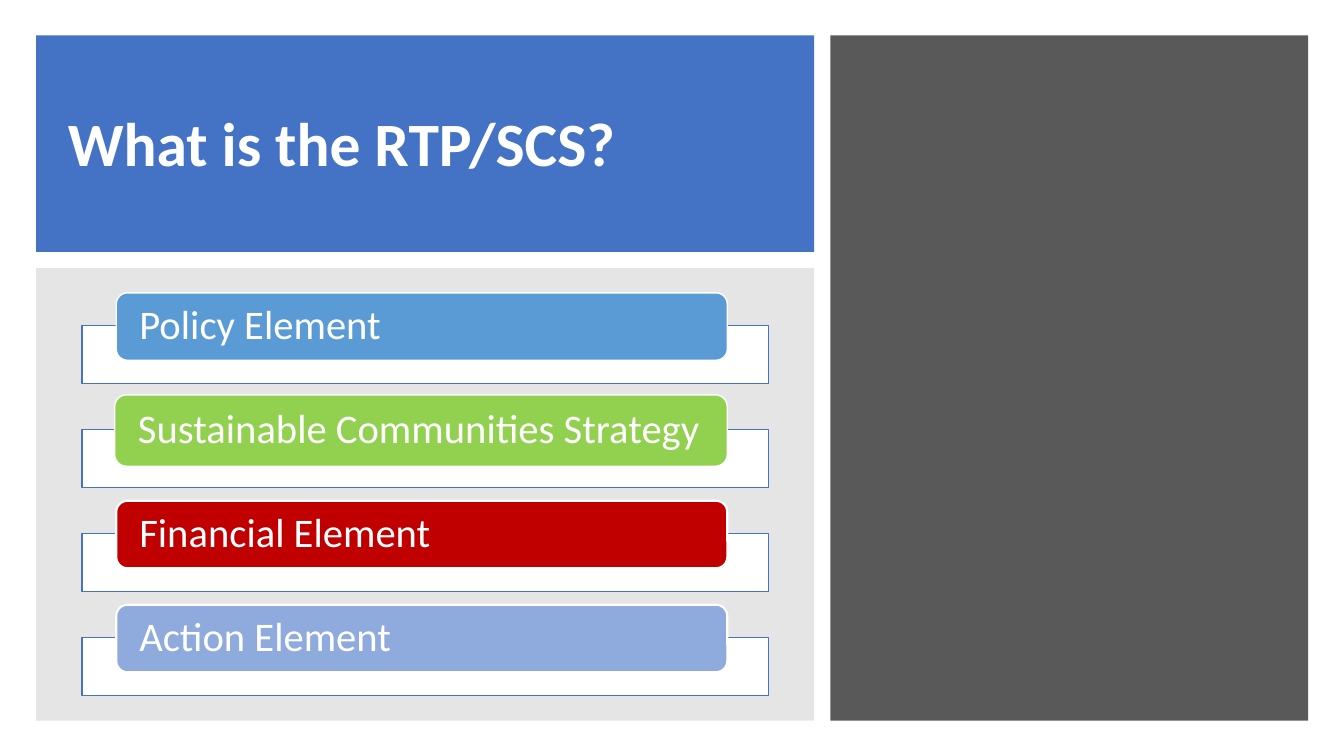
import pptx
import pptx.util
import pptx.dml.color
import pptx.enum.shapes
import pptx.enum.text
import pptx.oxml.ns
from dataclasses import dataclass
from lxml import etree
from pptx.util import Cm, Pt

TITLE = "What is the RTP/SCS?"
# label, fill, outline in points, tab width and height in cm
ELEMENTS = [
    ("Policy Element", "5B9BD5", 1, 15.4, 1.7),
    ("Sustainable Communities Strategy", "92D050", 1, 15.44, 1.8),
    ("Financial Element", "C00000", 1.5, 15.4, 1.7),
    ("Action Element", "8FAADC", 1.5, 15.4, 1.7),
]


@dataclass(frozen=True)
class Theme:
    font: str = "Calibri"
    title_size: float = 44
    label_size: float = 29
    blue: str = "4472C4"
    grey: str = "7F7F7F"
    dark: str = "595959"
    white: str = "FFFFFF"


THEME = Theme()

# Lengths in cm
MARGIN_LEFT, MARGIN_TOP = 0.91, 0.89
MAIN_WIDTH, SIDE_WIDTH = 19.61, 12.04
HEADER_HEIGHT, BODY_HEIGHT = 5.46, 11.4
GUTTER = 0.41
TITLE_INDENT = 0.55
BAR_LEFT, BAR_TOP, BAR_WIDTH, BAR_HEIGHT = 2.07, 8.21, 17.3, 1.45
BAR_STEP = 2.62
TAB_RIGHT, TAB_DROP = 18.33, 0.02
# The rounded corners add a little to the left and right insets
TAB_INSET_X, TAB_INSET_Y = 0.5, 0.08


def rgb(color):
    return pptx.dml.color.RGBColor.from_string(color)


def add_box(slide, kind, left, top, width, height, fill, opacity=100,
            line=None, line_width=1):
    """Add a flat preset shape; lengths in cm, opacity in percent."""
    shape = slide.shapes.add_shape(kind, Cm(left), Cm(top), Cm(width), Cm(height))
    shape.shadow.inherit = False
    shape.fill.solid()
    shape.fill.fore_color.rgb = rgb(fill)
    if opacity < 100:
        qn = pptx.oxml.ns.qn
        color = shape.fill._xPr.find(qn("a:solidFill")).find(qn("a:srgbClr"))
        etree.SubElement(color, qn("a:alpha"), val=str(opacity * 1000))
    if line:
        shape.line.color.rgb = rgb(line)
        shape.line.width = Pt(line_width)
    else:
        shape.line.fill.background()
    return shape


def write_text(shape, text, size, color=THEME.white, bold=False,
               inset_x=0.25, inset_y=0.13):
    frame = shape.text_frame
    frame.word_wrap = True
    frame.vertical_anchor = pptx.enum.text.MSO_ANCHOR.MIDDLE
    frame.margin_left = frame.margin_right = Cm(inset_x)
    frame.margin_top = frame.margin_bottom = Cm(inset_y)
    paragraph = frame.paragraphs[0]
    paragraph.alignment = pptx.enum.text.PP_ALIGN.LEFT
    paragraph.line_spacing = 0.9
    run = paragraph.add_run()
    run.text = text
    run.font.name = THEME.font
    run.font.size = Pt(size)
    run.font.bold = bold
    run.font.color.rgb = rgb(color)


def add_panels(slide):
    rectangle = pptx.enum.shapes.MSO_SHAPE.RECTANGLE
    add_box(slide, rectangle, MARGIN_LEFT, MARGIN_TOP, MAIN_WIDTH,
            HEADER_HEIGHT, THEME.blue)
    add_box(slide, rectangle, MARGIN_LEFT, MARGIN_TOP + HEADER_HEIGHT + GUTTER,
            MAIN_WIDTH, BODY_HEIGHT, THEME.grey, opacity=20)
    add_box(slide, rectangle, MARGIN_LEFT + MAIN_WIDTH + GUTTER, MARGIN_TOP,
            SIDE_WIDTH, HEADER_HEIGHT + GUTTER + BODY_HEIGHT, THEME.dark)


def add_title(slide):
    title = slide.shapes.add_textbox(
        Cm(MARGIN_LEFT + TITLE_INDENT), Cm(MARGIN_TOP + TITLE_INDENT),
        Cm(18.31), Cm(4.52))
    write_text(title, TITLE, THEME.title_size, bold=True)


def add_elements(slide):
    """Centre each tab on the top edge of its bar."""
    shapes = pptx.enum.shapes.MSO_SHAPE
    for index, (label, fill, outline, width, height) in enumerate(ELEMENTS):
        top = BAR_TOP + index * BAR_STEP
        add_box(slide, shapes.RECTANGLE, BAR_LEFT, top, BAR_WIDTH, BAR_HEIGHT,
                THEME.white, line=THEME.blue)
        tab = add_box(slide, shapes.ROUNDED_RECTANGLE, TAB_RIGHT - width,
                      top + TAB_DROP - height / 2, width, height, fill,
                      line=THEME.white, line_width=outline)
        write_text(tab, label, THEME.label_size,
                   inset_x=TAB_INSET_X, inset_y=TAB_INSET_Y)


def main():
    presentation = pptx.Presentation()
    presentation.slide_width = Cm(33.87)
    presentation.slide_height = Cm(19.05)
    slide = presentation.slides.add_slide(presentation.slide_layouts[6])
    add_panels(slide)
    add_title(slide)
    add_elements(slide)
    presentation.save("out.pptx")


if __name__ == "__main__":
    main()
